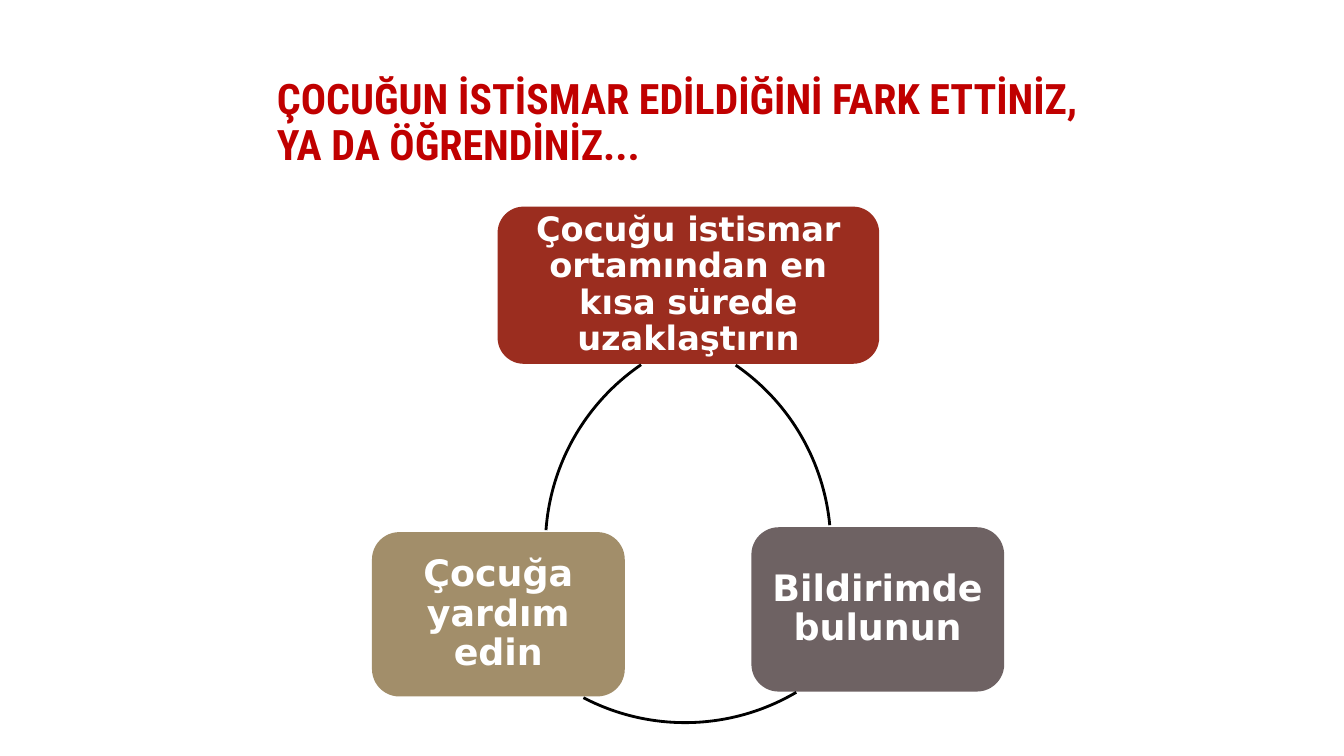
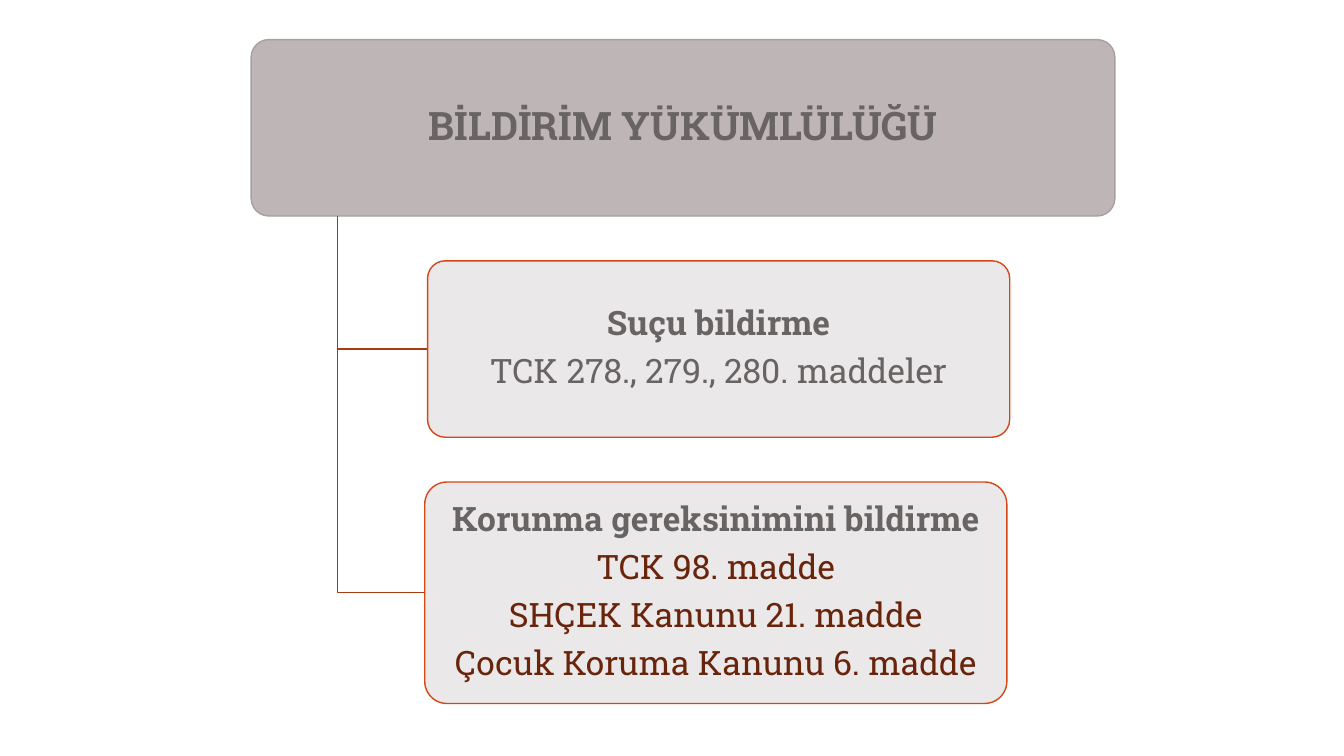
from lxml import etree
from pptx import Presentation
from pptx.dml.color import RGBColor
from pptx.enum import shapes, text
from pptx.oxml import ns
from pptx.util import Pt

WHITE = RGBColor(0xFF, 0xFF, 0xFF)
BLACK = RGBColor(0x00, 0x00, 0x00)
TITLE_RED = RGBColor(0xC0, 0x00, 0x00)
BRICK = RGBColor(0x9B, 0x2D, 0x1F)
PLUM = RGBColor(0x6E, 0x62, 0x63)
SAND = RGBColor(0xA2, 0x8E, 0x6A)
HEADER_FILL = RGBColor(0xBD, 0xB5, 0xB6)
HEADER_LINE = RGBColor(0xA6, 0xA1, 0xA1)
CARD_FILL = RGBColor(0xE9, 0xE6, 0xE7)
CARD_LINE = RGBColor(0xD3, 0x48, 0x17)
BRANCH_LINE = RGBColor(0xA9, 0x3A, 0x12)
GREY_TEXT = RGBColor(0x69, 0x64, 0x64)
BROWN_TEXT = RGBColor(0x69, 0x24, 0x0C)

# Text formats: font name, size, bold, colour
TITLE = dict(name="Roboto Condensed", size=Pt(30), bold=True, color=TITLE_RED)
STEP_LARGE = dict(name="DejaVu Sans", size=Pt(26), bold=True, color=WHITE)
STEP_SMALL = dict(STEP_LARGE, size=Pt(24))
HEADER = dict(name="Roboto Slab", size=Pt(28), bold=True, color=GREY_TEXT)
CARD_HEAD = dict(HEADER, size=Pt(24))
CARD_GREY = dict(CARD_HEAD, bold=False)
CARD_BROWN = dict(CARD_GREY, color=BROWN_TEXT)


def write(frame, lines, align, margins):
    """Fill a text frame with (wording, format) lines."""
    frame.word_wrap = True
    frame.vertical_anchor = text.MSO_ANCHOR.MIDDLE
    across, down = margins
    for side, size in dict(left=across, right=across, top=down, bottom=down).items():
        setattr(frame, "margin_" + side, Pt(size))
    for index, (wording, style) in enumerate(lines):
        para = frame.add_paragraph() if index else frame.paragraphs[0]
        para.alignment = align
        para.line_spacing = 0.9
        if index < len(lines) - 1:
            para.space_after = Pt(8.4)
        span = para.add_run()
        span.text = wording
        for key, value in style.items():
            if key == "color":
                span.font.color.rgb = value
            else:
                setattr(span.font, key, value)


def set_line(shape, color, width):
    shape.shadow.inherit = False
    shape.line.color.rgb = color
    shape.line.width = Pt(width)


def rounded_box(page, box, fill, lines, margins, line=None, corner=None, alpha=None):
    shape = page.shapes.add_shape(
        shapes.MSO_SHAPE.ROUNDED_RECTANGLE, *(Pt(v) for v in box))
    shape.shadow.inherit = False
    shape.fill.solid()
    shape.fill.fore_color.rgb = fill
    if alpha is not None:
        color = shape.fill._xPr.find(".//" + ns.qn("a:srgbClr"))
        etree.SubElement(color, ns.qn("a:alpha"), val=str(alpha * 1000))
    if corner is not None:
        shape.adjustments[0] = corner
    if line is None:
        shape.line.fill.background()
    else:
        set_line(shape, line, 1)
    write(shape.text_frame, lines, text.PP_ALIGN.CENTER, margins)


def arc(page, center, radius, start, end):
    """Draw part of a circle, clockwise between two angles in degrees."""
    x, y = center
    shape = page.shapes.add_shape(
        shapes.MSO_SHAPE.ARC, Pt(x - radius), Pt(y - radius),
        Pt(2 * radius), Pt(2 * radius))
    # Angles are stored in 60000ths of a degree, adjustments in 100000ths
    for index, angle in enumerate((start, end)):
        shape.adjustments[index] = angle * 0.6
    shape.fill.background()
    set_line(shape, BLACK, 2)


def branch(page, start, end):
    """Draw a line that goes down and then right."""
    builder = page.shapes.build_freeform(Pt(start[0]), Pt(start[1]))
    builder.add_line_segments(
        [(Pt(start[0]), Pt(end[1])), (Pt(end[0]), Pt(end[1]))], close=False)
    shape = builder.convert_to_shape()
    shape.fill.background()
    set_line(shape, BRANCH_LINE, 1)


def title(page, box, wording):
    shape = page.shapes.add_textbox(*(Pt(v) for v in box))
    write(shape.text_frame, [(wording, TITLE)], text.PP_ALIGN.LEFT, (7.2, 3.6))


def cycle(page, left, top):
    """Three steps joined by arcs."""
    steps = [
        ((89.7, 0, 272.6, 112.3), BRICK, STEP_SMALL,
         "Çocuğu istismar ortamından en kısa sürede uzaklaştırın"),
        ((271, 229, 180.6, 117.4), PLUM, STEP_LARGE, "Bildirimde bulunun"),
        ((0, 232.5, 180.6, 117.4), SAND, STEP_LARGE, "Çocuğa yardım edin"),
    ]
    for (x, y, width, height), fill, style, wording in steps:
        rounded_box(page, (left + x, top + y, width, height), fill,
                    [(wording, style)], (7.2, 7.2))
    arcs = [((171.1, 242.3), 304.5, 354.6),
            ((223.6, 212), 59.5, 117.6),
            ((280.5, 242.3), 184.1, 235.7)]
    for (x, y), start, end in arcs:
        arc(page, (left + x, top + y), 156.6, start, end)


def duty_tree(page, left, top, width):
    """A header with cards that hang from a trunk line."""
    header_height, gap = 126, 32
    trunk = left + width / 10
    rounded_box(page, (left, top, width, header_height), HEADER_FILL,
                [("BİLDİRİM YÜKÜMLÜLÜĞÜ", HEADER)], (4, 3), HEADER_LINE, 0.1)
    cards = [
        (126, 126, [("Suçu bildirme", CARD_HEAD),
                    ("TCK 278., 279., 280. maddeler", CARD_GREY)]),
        (124, 158.2, [("Korunma gereksinimini bildirme", CARD_HEAD),
                      ("TCK 98. madde", CARD_BROWN),
                      ("SHÇEK Kanunu 21. madde", CARD_BROWN),
                      ("Çocuk Koruma Kanunu 6. madde", CARD_BROWN)]),
    ]
    y = top + header_height + gap
    for indent, height, lines in cards:
        x = left + indent
        branch(page, (trunk, top + header_height), (x, y + height / 2))
        rounded_box(page, (x, y, 415.8, height), CARD_FILL, lines, (4, 2),
                    CARD_LINE, 0.1, alpha=90)
        y += height + gap


def main():
    deck = Presentation()
    deck.slide_width, deck.slide_height = Pt(960), Pt(540)
    blank = deck.slide_layouts[6]

    # Steps to take
    page = deck.slides.add_slide(blank)
    title(page, (190.8, 49, 593.3, 79.2),
          "ÇOCUĞUN İSTİSMAR EDİLDİĞİNİ FARK ETTİNİZ, YA DA ÖĞRENDİNİZ...")
    cycle(page, 265.7, 147.6)

    # Duty to report
    page = deck.slides.add_slide(blank)
    duty_tree(page, 179.4, 28.3, 617)

    deck.save("out.pptx")


if __name__ == "__main__":
    main()
